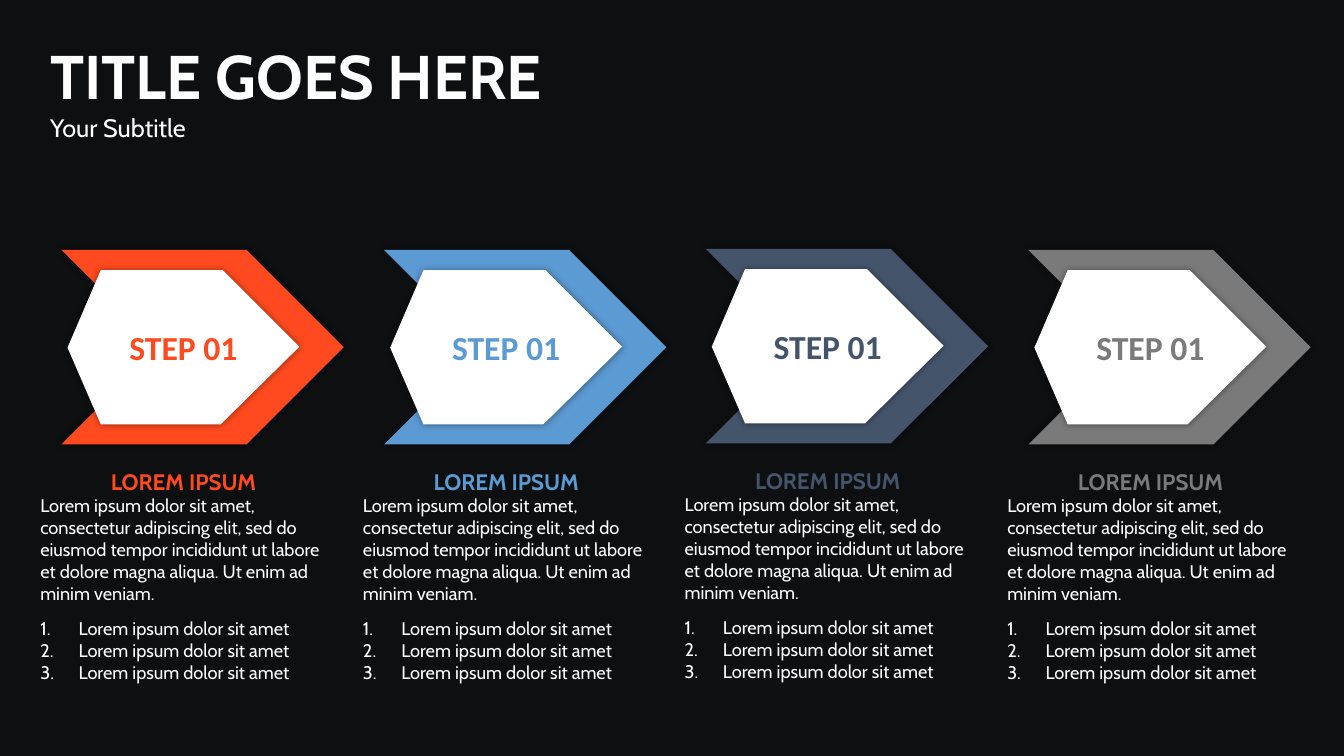
import pptx
import pptx.util
import pptx.dml.color
import pptx.enum.shapes
import pptx.enum.text
import pptx.oxml
import pptx.oxml.ns

Inches = pptx.util.Inches
Pt = pptx.util.Pt
RGBColor = pptx.dml.color.RGBColor
Align = pptx.enum.text.PP_ALIGN
Anchor = pptx.enum.text.MSO_ANCHOR
Fit = pptx.enum.text.MSO_AUTO_SIZE

DARK = RGBColor(0x0E, 0x0F, 0x11)
WHITE = RGBColor(0xFF, 0xFF, 0xFF)
ORANGE = RGBColor(0xFE, 0x4A, 0x1E)
BLUE = RGBColor(0x5C, 0x9A, 0xD3)
NAVY = RGBColor(0x44, 0x54, 0x6B)
GRAY = RGBColor(0x7A, 0x7A, 0x7A)

TITLE = "TITLE GOES HERE"
SUB = "Your Subtitle"
BODY = ("Lorem ipsum dolor sit amet, consectetur adipiscing elit, sed do eiusmod "
        "tempor incididunt ut labore et dolore magna aliqua. Ut enim ad minim veniam.")
ITEMS = ["Lorem ipsum dolor sit amet"] * 3
STEPS = [
    ("STEP 01", "LOREM IPSUM", ORANGE, 2.48),
    ("STEP 01", "LOREM IPSUM", BLUE, 2.48),
    ("STEP 01", "LOREM IPSUM", NAVY, 2.47),
    ("STEP 01", "LOREM IPSUM", GRAY, 2.48),
]
LEFT, PITCH = 0.61, 3.197
BADGE = [(0.33, 1.53), (1.52, 1.53), (2.3, 0.76), (1.54, 0), (0.33, 0), (0, 0.77)]


def write(para, text, size, color, bold=False, face="Cabin"):
    para.text = text
    font = para.runs[0].font
    font.size, font.bold, font.name = Pt(size), bold, face
    font.color.rgb = color


def paint(shape, color):
    shape.fill.solid()
    shape.fill.fore_color.rgb = color
    shape.line.fill.background()
    shape.shadow.inherit = False
    glow = pptx.oxml.parse_xml(
        f'<a:outerShdw {pptx.oxml.ns.nsdecls("a")} blurRad="{Pt(5)}" dist="0" dir="0" '
        'algn="ctr" rotWithShape="0"><a:srgbClr val="000000">'
        '<a:alpha val="40000"/></a:srgbClr></a:outerShdw>')
    shape._element.spPr.find(pptx.oxml.ns.qn("a:effectLst")).append(glow)


def number(para):
    props = para._p.get_or_add_pPr()
    props.set("marL", str(Inches(0.38)))
    props.set("indent", str(-Inches(0.38)))
    props.append(pptx.oxml.parse_xml(
        f'<a:buAutoNum {pptx.oxml.ns.nsdecls("a")} type="arabicPeriod"/>'))


def add_box(slide, x, y, w, h):
    frame = slide.shapes.add_textbox(Inches(x), Inches(y), Inches(w), Inches(h)).text_frame
    frame.word_wrap = True
    frame.auto_size = Fit.SHAPE_TO_FIT_TEXT
    return frame


def add_step(slide, x, y, label, head, color):
    arrow = slide.shapes.add_shape(
        pptx.enum.shapes.MSO_SHAPE.CHEVRON, Inches(x), Inches(y), Inches(2.8), Inches(1.93))
    paint(arrow, color)

    points = [(Inches(x + 0.06 + dx), Inches(y + 0.2 + dy)) for dx, dy in BADGE]
    path = slide.shapes.build_freeform(*points[0])
    path.add_line_segments(points[1:], close=True)
    badge = path.convert_to_shape()
    paint(badge, WHITE)
    badge.text_frame.vertical_anchor = Anchor.MIDDLE
    para = badge.text_frame.paragraphs[0]
    para.alignment = Align.CENTER
    write(para, label, 24, color, True, "Calibri")

    frame = add_box(slide, x - 0.28, y + 2.13, 2.98, 2.22)
    frame.margin_left = frame.margin_right = Inches(0.07)
    frame.margin_top = frame.margin_bottom = Inches(0.03)
    para = frame.paragraphs[0]
    para.alignment = Align.CENTER
    write(para, head, 16, color, True)
    write(frame.add_paragraph(), BODY, 13, WHITE)
    for i, item in enumerate(ITEMS):
        para = frame.add_paragraph()
        number(para)
        if i == 0:
            para.space_before = Pt(9.7)
        write(para, item, 13, WHITE)


def main():
    deck = pptx.Presentation()
    deck.slide_width, deck.slide_height = Inches(13.33), Inches(7.5)
    slide = deck.slides.add_slide(deck.slide_layouts[6])
    slide.background.fill.solid()
    slide.background.fill.fore_color.rgb = DARK

    frame = add_box(slide, 0.4, 0.33, 6.5, 1.14)
    write(frame.paragraphs[0], TITLE, 44, WHITE, True)
    write(frame.add_paragraph(), SUB, 18, WHITE)

    for i, (label, head, color, y) in enumerate(STEPS):
        add_step(slide, round(LEFT + i * PITCH, 2), y, label, head, color)
    deck.save("out.pptx")


if __name__ == "__main__":
    main()
